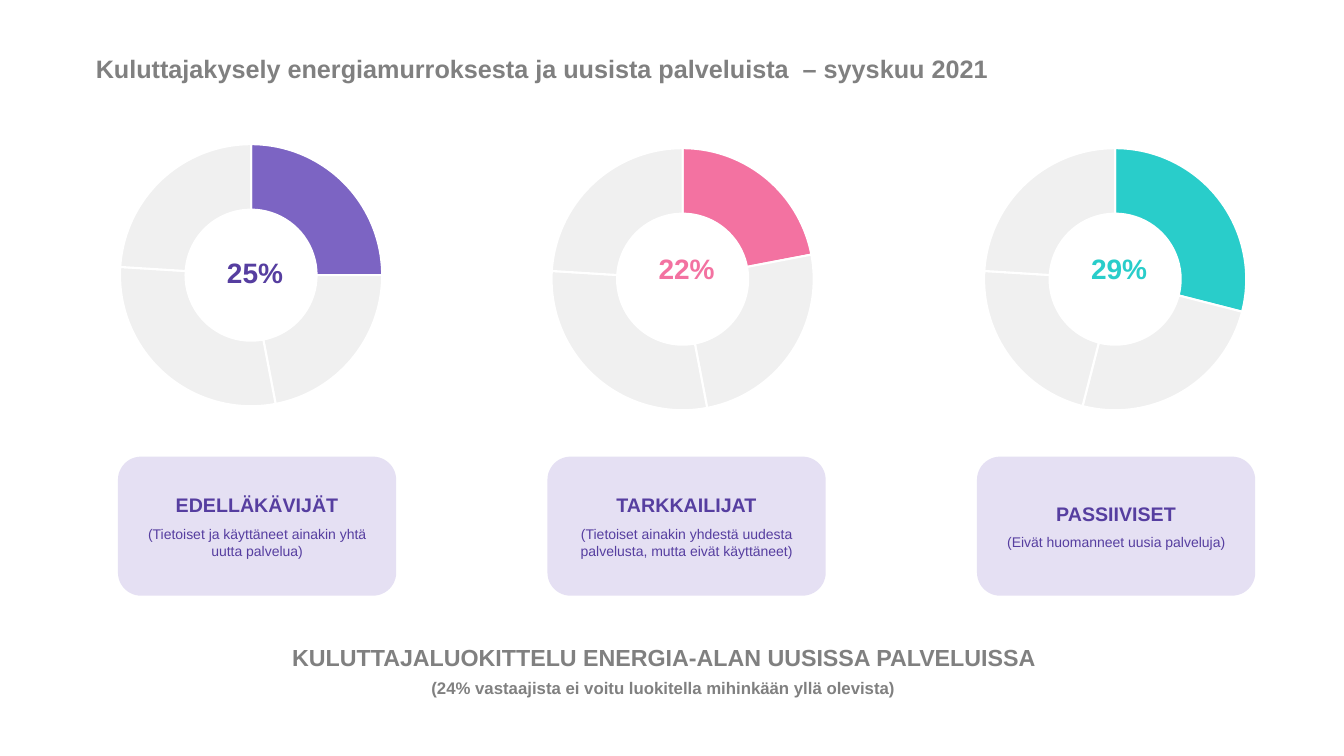
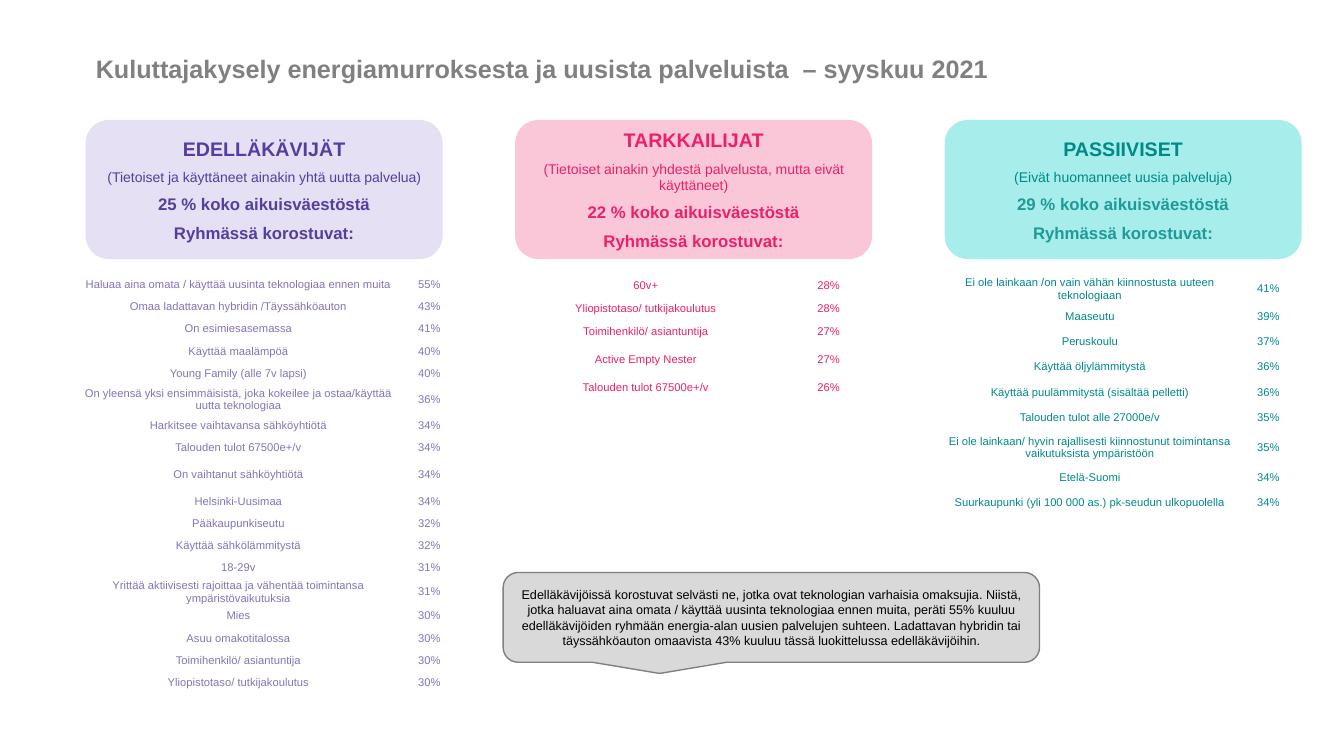
from lxml import etree
from pptx import Presentation
from pptx.chart.data import CategoryChartData
from pptx.dml.color import RGBColor
from pptx.enum.chart import XL_CHART_TYPE
from pptx.enum.shapes import MSO_SHAPE
from pptx.enum.text import MSO_ANCHOR, PP_ALIGN
from pptx.oxml.ns import qn
from pptx.util import Inches, Pt

DOUGHNUT = XL_CHART_TYPE.DOUGHNUT
ROUNDED = MSO_SHAPE.ROUNDED_RECTANGLE
CALLOUT = MSO_SHAPE.ROUNDED_RECTANGULAR_CALLOUT
MIDDLE = MSO_ANCHOR.MIDDLE
CENTER, LEFT = PP_ALIGN.CENTER, PP_ALIGN.LEFT

FONT = "Arial"
COLORS = {
    "white": "FFFFFF", "black": "000000", "grey": "808080",
    "bubble": "D9D9D9", "slice": "F0F0F0",
    "purple": "563EA0", "violet": "7C64C3", "lavender": "8674B4", "lilac": "E5E0F3",
    "pink": "F372A1", "magenta": "EC206A", "rose": "FAC7D9",
    "turquoise": "29CDCA", "teal": "008987", "sea": "1F9A97", "aqua": "A7EDEC",
}
TITLE = "Kuluttajakysely energiamurroksesta ja uusista palveluista  – syyskuu 2021"
CARD_PITCH = 4.26
CARD_HEIGHT = 1.38

# chart box, values, slice colour, label colour, label offset and height
DOUGHNUTS = [
    ((0.56, 0.89, 3.94, 3.54), (25, 22, 29, 24), "violet", "purple", 1.53, 0.56),
    ((4.84, 0.93, 3.94, 3.54), (22, 25, 29, 24), "pink", "pink", 1.51, 0.44),
    ((9.13, 0.93, 3.94, 3.54), (29, 25, 22, 24), "turquoise", "turquoise", 1.51, 0.44),
]
CLASSES = [
    ("EDELLÄKÄVIJÄT", "(Tietoiset ja käyttäneet ainakin yhtä uutta palvelua)"),
    ("TARKKAILIJAT", "(Tietoiset ainakin yhdestä uudesta palvelusta, mutta eivät käyttäneet)"),
    ("PASSIIVISET", "(Eivät huomanneet uusia palveluja)"),
]
# name, description, share, card fill, heading colour, share colour
PROFILES = [
    (*CLASSES[0], 25, "lilac", "purple", "purple"),
    ("TARKKAILIJAT", "(Tietoiset ainakin yhdestä palvelusta, mutta eivät käyttäneet)",
     22, "rose", "magenta", "magenta"),
    (*CLASSES[2], 29, "aqua", "teal", "sea"),
]
# left, column widths, text colour, usual row height, rows (label, percent, own height)
TABLES = [
    (0.73, (3.27, 0.52), "lavender", 0.22, [
        ("Haluaa aina omata / käyttää uusinta teknologiaa ennen muita", 55),
        ("Omaa ladattavan hybridin /Täyssähköauton", 43),
        ("On esimiesasemassa", 41),
        ("Käyttää maalämpöä", 40),
        ("Young Family (alle 7v lapsi)", 40),
        ("On yleensä yksi ensimmäisistä, joka kokeilee ja ostaa/käyttää uutta teknologiaa",
         36, 0.3),
        ("Harkitsee vaihtavansa sähköyhtiötä", 34),
        ("Talouden tulot 67500e+/v", 34),
        ("On vaihtanut sähköyhtiötä", 34, 0.31),
        ("Helsinki-Uusimaa", 34),
        ("Pääkaupunkiseutu", 32),
        ("Käyttää sähkölämmitystä", 32),
        ("18-29v", 31),
        ("Yrittää aktiivisesti rajoittaa ja vähentää toimintansa ympäristövaikutuksia", 31),
        ("Mies", 30),
        ("Asuu omakotitalossa", 30),
        ("Toimihenkilö/ asiantuntija", 30),
        ("Yliopistotaso/ tutkijakoulutus", 30),
    ]),
    (4.86, (3.09, 0.54), "magenta", 0.23, [
        ("60v+", 28),
        ("Yliopistotaso/ tutkijakoulutus", 28),
        ("Toimihenkilö/ asiantuntija", 27),
        ("Active Empty Nester", 27, 0.33),
        ("Talouden tulot 67500e+/v", 26),
    ]),
    (9.27, (3.08, 0.46), "teal", 0.25, [
        ("Ei ole lainkaan /on vain vähän kiinnostusta uuteen teknologiaan", 41, 0.3),
        ("Maaseutu", 39),
        ("Peruskoulu", 37),
        ("Käyttää öljylämmitystä", 36),
        ("Käyttää puulämmitystä (sisältää pelletti)", 36),
        ("Talouden tulot alle 27000e/v", 35),
        ("Ei ole lainkaan/ hyvin rajallisesti kiinnostunut toimintansa vaikutuksista "
         "ympäristöön", 35, 0.35),
        ("Etelä-Suomi", 34),
        ("Suurkaupunki (yli 100 000 as.) pk-seudun ulkopuolella", 34),
    ]),
]
BUBBLE_TEXT = (
    "Edelläkävijöissä korostuvat selvästi ne, jotka ovat teknologian varhaisia omaksujia. "
    "Niistä, jotka haluavat aina omata / käyttää uusinta teknologiaa ennen muita, peräti 55% "
    "kuuluu edelläkävijöiden ryhmään energia-alan uusien palvelujen suhteen. Ladattavan "
    "hybridin tai täyssähköauton omaavista 43% kuuluu tässä luokittelussa edelläkävijöihin."
)


def rgb(name):
    return RGBColor.from_string(COLORS[name])


def inches(box):
    return [Inches(v) for v in box]


def write(tf, lines, align=CENTER, after=0, spacing=None):
    """Fill a text frame with one paragraph per (text, size, colour, bold)."""
    tf.word_wrap = True
    for i, (text, size, color, bold) in enumerate(lines):
        p = tf.paragraphs[0] if i == 0 else tf.add_paragraph()
        p.alignment = align
        p.space_before = Pt(0)
        p.space_after = Pt(after)
        if spacing:
            p.line_spacing = spacing
        r = p.add_run()
        r.text = text
        r.font.name = FONT
        r.font.size = Pt(size)
        r.font.bold = bold
        r.font.color.rgb = rgb(color)


def add_titled_slide(prs):
    s = prs.slides.add_slide(prs.slide_layouts[5])
    title = s.shapes.title
    title.left, title.top, title.width, title.height = inches((0.85, 0.48, 11.63, 0.4))
    title.text_frame.vertical_anchor = MIDDLE
    write(title.text_frame, [(TITLE, 18, "grey", True)], LEFT)
    return s


def add_text(s, box, lines, anchor=None, **style):
    tf = s.shapes.add_textbox(*inches(box)).text_frame
    if anchor is not None:
        tf.vertical_anchor = anchor
    write(tf, lines, **style)


def add_panel(s, kind, box, fill, lines, line=None, after=0):
    sp = s.shapes.add_shape(kind, *inches(box))
    sp.shadow.inherit = False
    sp.fill.solid()
    sp.fill.fore_color.rgb = rgb(fill)
    if line:
        sp.line.color.rgb = rgb(line)
        sp.line.width = Pt(1)
    else:
        sp.line.fill.background()
    sp.text_frame.vertical_anchor = MIDDLE
    write(sp.text_frame, lines, after=after)


def set_plot_layout(chart, hole, x, y, w, h):
    """Place the inner plot area by fractions of the chart and size its hole."""
    area = chart.element.find(".//" + qn("c:plotArea"))
    for old in area.findall(qn("c:layout")):
        area.remove(old)
    layout = etree.Element(qn("c:layout"))
    manual = etree.SubElement(layout, qn("c:manualLayout"))
    settings = [("layoutTarget", "inner"), ("xMode", "edge"), ("yMode", "edge"),
                ("x", x), ("y", y), ("w", w), ("h", h)]
    for tag, value in settings:
        etree.SubElement(manual, qn("c:" + tag)).set("val", str(value))
    area.insert(0, layout)
    area.find(".//" + qn("c:holeSize")).set("val", str(hole))


def add_doughnut(s, box, values, slice_color, label_color, label_top, label_height):
    data = CategoryChartData()
    data.categories = ["1", "2", "3", "4"]
    data.add_series("Series 1", values)
    chart = s.shapes.add_chart(DOUGHNUT, *inches(box), data).chart
    chart.has_legend = False
    chart.has_title = False
    chart.font.name = FONT
    chart.font.size = Pt(10)
    chart.font.color.rgb = rgb("black")
    plot = chart.plots[0]
    plot.vary_by_categories = True
    plot.has_data_labels = False
    for i in range(len(values)):
        fmt = plot.series[0].points[i].format
        fmt.fill.solid()
        fmt.fill.fore_color.rgb = rgb("slice" if i else slice_color)
        fmt.line.color.rgb = rgb("white")
        fmt.line.width = Pt(1.5)
    set_plot_layout(chart, 75, 0.16, 0.08, 0.66, 0.88)
    left, top = box[:2]
    add_text(s, (left + 1.25, top + label_top, 1.44, label_height),
             [(f"{values[0]}%", 20, label_color, True)], MIDDLE)


def add_share_table(s, left, top, widths, color, row_height, rows):
    heights = [row[2] if len(row) > 2 else row_height for row in rows]
    frame = s.shapes.add_table(len(rows), len(widths),
                               *inches((left, top, sum(widths), sum(heights))))
    table = frame.table
    table.first_row = table.horz_banding = False
    for column, width in zip(table.columns, widths):
        column.width = Inches(width)
    for i, (label, percent, *_) in enumerate(rows):
        table.rows[i].height = Inches(heights[i])
        for j, text in enumerate((label, f"{percent}%")):
            cell = table.cell(i, j)
            cell.fill.background()
            cell.vertical_anchor = MIDDLE
            cell.margin_left = cell.margin_right = cell.margin_top = Inches(0.01)
            cell.margin_bottom = 0
            write(cell.text_frame, [(text, 8, color, False)])


def build_overview(prs):
    s = add_titled_slide(prs)
    for doughnut in DOUGHNUTS:
        add_doughnut(s, *doughnut)
    for i, (name, description) in enumerate(CLASSES):
        add_panel(s, ROUNDED, (1.17 + i * CARD_PITCH, 4.53, 2.76, CARD_HEIGHT), "lilac",
                  [(name, 14, "purple", True), (description, 10, "purple", False)], after=6)
    add_text(s, (1.67, 6.36, 9.82, 0.65), [
        ("KULUTTAJALUOKITTELU ENERGIA-ALAN UUSISSA PALVELUISSA", 16.6, "grey", True),
        ("(24% vastaajista ei voitu luokitella mihinkään yllä olevista)", 12, "grey", True),
    ], after=6, spacing=0.9)


def build_profiles(prs):
    s = add_titled_slide(prs)
    for i, (name, description, share, fill, color, share_color) in enumerate(PROFILES):
        add_panel(s, ROUNDED, (0.85 + i * CARD_PITCH, 1.19, 3.54, CARD_HEIGHT), fill, [
            (name, 14, color, True),
            (description, 10, color, False),
            (f"{share} % koko aikuisväestöstä", 12, share_color, True),
            ("Ryhmässä korostuvat:", 12, share_color, True),
        ], after=6)
    for left, *table in TABLES:
        add_share_table(s, left, 2.71, *table)
    add_panel(s, CALLOUT, (4.99, 5.68, 5.32, 0.89), "bubble",
              [(BUBBLE_TEXT, 9, "black", False)], line="grey")


def main():
    prs = Presentation()
    prs.slide_width, prs.slide_height = Inches(13.33), Inches(7.5)
    build_overview(prs)
    build_profiles(prs)
    prs.save("out.pptx")


if __name__ == "__main__":
    main()
